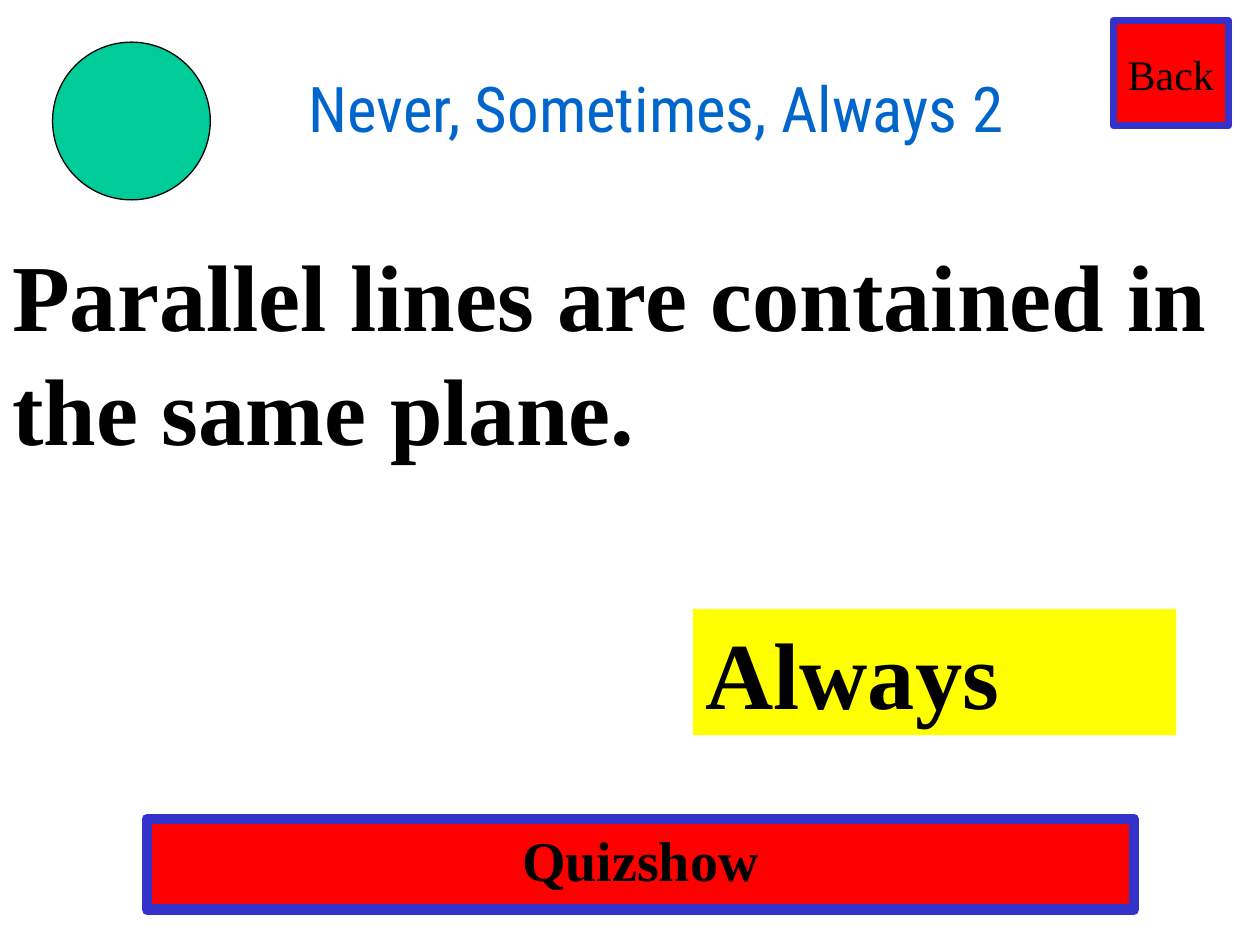
"""Builds a quiz question slide with its answer and navigation buttons."""
from dataclasses import dataclass

from lxml import etree
from pptx import Presentation
from pptx import util as u
from pptx.dml.color import RGBColor
from pptx.enum import shapes, text
from pptx.oxml.ns import qn


@dataclass(frozen=True)
class Theme:
    ink: str = "000000"
    button: str = "FF0000"
    border: str = "3333CC"
    answer: str = "FFFF00"
    marker: str = "00CC99"
    title: str = "0066CC"
    title_edge: str = "99CCFF"
    body_font: str = "Times New Roman"
    title_font: str = "Roboto Condensed"
    statement_size: int = 54
    title_size: int = 36
    game_size: int = 32
    back_size: int = 24


class QuizSlide:
    def __init__(self, deck, theme):
        self.theme = theme
        self.slide = deck.slides.add_slide(deck.slide_layouts[6])

    def shape(self, kind, box, fill, line=None, width=0):
        item = self.slide.shapes.add_shape(kind, *map(u.Cm, box))
        item.shadow.inherit = False
        item.fill.solid()
        item.fill.fore_color.rgb = RGBColor.from_string(fill)
        if line:
            item.line.color.rgb = RGBColor.from_string(line)
            item.line.width = u.Pt(width)
        else:
            item.line.fill.background()
        return item

    def textbox(self, box):
        return self.slide.shapes.add_textbox(*map(u.Cm, box))

    def label(self, item, words, size, color=None, font=None, bold=False,
              align=text.PP_ALIGN.CENTER, anchor=text.MSO_ANCHOR.TOP,
              wrap=True, grow=False, spaced=False):
        frame = item.text_frame
        frame.word_wrap = wrap
        frame.vertical_anchor = anchor
        if grow:
            frame.auto_size = text.MSO_AUTO_SIZE.SHAPE_TO_FIT_TEXT
        paragraph = frame.paragraphs[0]
        paragraph.alignment = align
        if spaced:
            before = etree.SubElement(paragraph._p.get_or_add_pPr(), qn("a:spcBef"))
            etree.SubElement(before, qn("a:spcPct"), val="50000")
        run = paragraph.add_run()
        run.text = words
        run.font.size = u.Pt(size)
        run.font.bold = bold
        run.font.name = font or self.theme.body_font
        run.font.color.rgb = RGBColor.from_string(color or self.theme.ink)
        return run

    def outline(self, run, color, width):
        edge = etree.Element(qn("a:ln"), w=str(u.Pt(width)))
        fill = etree.SubElement(edge, qn("a:solidFill"))
        etree.SubElement(fill, qn("a:srgbClr"), val=color)
        run.font._element.insert(0, edge)


def main():
    deck = Presentation()
    deck.slide_width, deck.slide_height = u.Cm(25.4), u.Cm(19.05)
    theme = Theme()
    quiz = QuizSlide(deck, theme)
    rectangle = shapes.MSO_SHAPE.RECTANGLE
    left = text.PP_ALIGN.LEFT

    game = quiz.shape(rectangle, (2.96, 16.51, 19.9, 1.83), theme.button, theme.border, 6)
    quiz.label(game, "Quizshow", theme.game_size, bold=True, grow=True, spaced=True)

    back = quiz.shape(rectangle, (22.44, 0.42, 2.33, 2.12), theme.button, theme.border, 4)
    quiz.label(back, "Back", theme.back_size, anchor=text.MSO_ANCHOR.MIDDLE, wrap=False)

    statement = quiz.textbox((0, 4.66, 25.4, 4.83))
    quiz.label(statement, "Parallel lines are contained in the same plane.",
               theme.statement_size, bold=True, align=left, grow=True, spaced=True)

    answer = quiz.shape(rectangle, (13.97, 12.28, 9.74, 2.54), theme.answer)
    quiz.label(answer, "Always", theme.statement_size, bold=True, align=left,
               grow=True, spaced=True)

    quiz.shape(shapes.MSO_SHAPE.OVAL, (1.06, 0.85, 3.18, 3.18), theme.marker, theme.ink, 0.75)

    title = quiz.textbox((4.87, 1.27, 16.72, 2.75))
    heading = quiz.label(title, "Never, Sometimes, Always 2", theme.title_size,
                         theme.title, theme.title_font, wrap=False)
    quiz.outline(heading, theme.title_edge, 1.5)

    deck.save("out.pptx")


if __name__ == "__main__":
    main()
